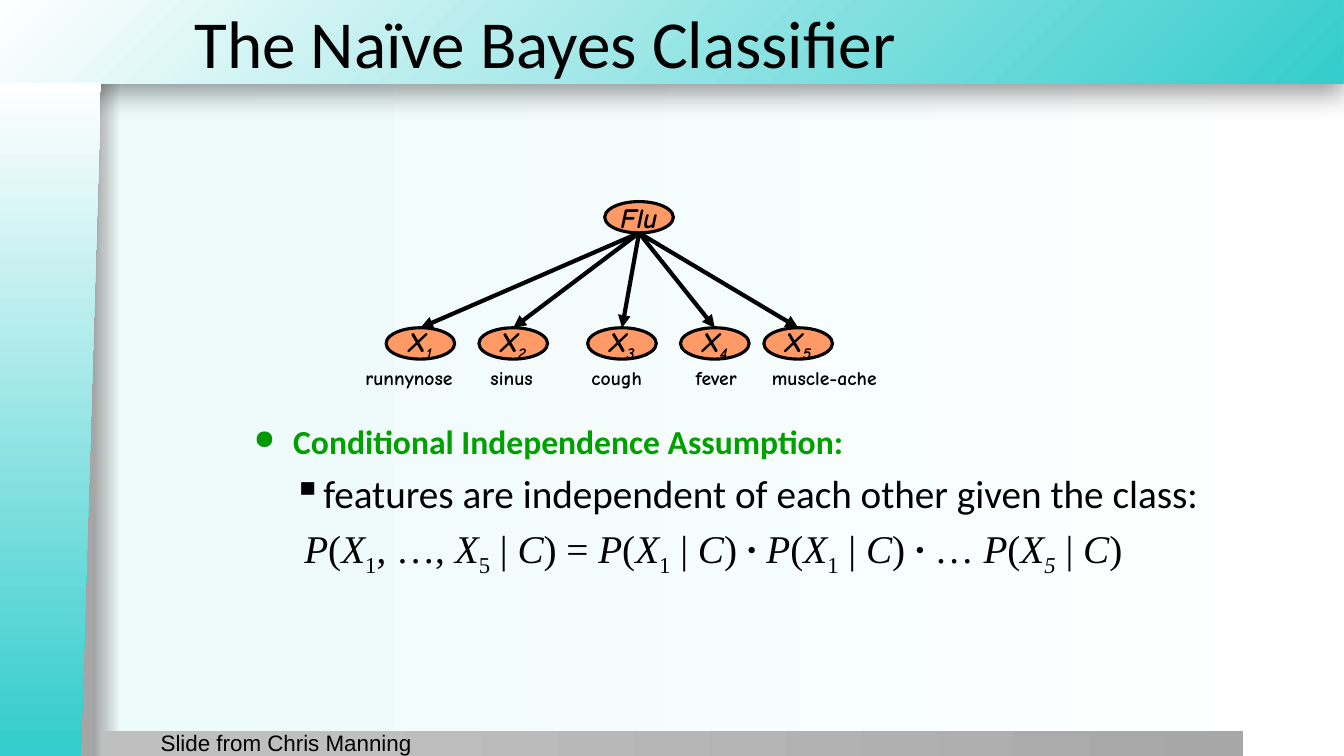
"""Build a slide on the naïve Bayes classifier with its feature diagram."""
from lxml import etree
from pptx import Presentation
from pptx.dml.color import RGBColor
from pptx.enum.shapes import MSO_CONNECTOR, MSO_SHAPE
from pptx.enum.text import MSO_ANCHOR, PP_ALIGN
from pptx.oxml.ns import qn
from pptx.util import Cm, Pt

STRAIGHT = MSO_CONNECTOR.STRAIGHT
RECTANGLE, OVAL = MSO_SHAPE.RECTANGLE, MSO_SHAPE.OVAL
MANUAL_INPUT = MSO_SHAPE.FLOWCHART_MANUAL_INPUT
MIDDLE, TOP = MSO_ANCHOR.MIDDLE, MSO_ANCHOR.TOP
LEFT, CENTER, RIGHT = PP_ALIGN.LEFT, PP_ALIGN.CENTER, PP_ALIGN.RIGHT

COLORS = {
    "teal": "34CCCC", "white": "FFFFFF", "black": "000000", "mist": "EDFBFB",
    "edge": "A6A6A6", "silver": "BFBFBF", "gray": "A7A7A7",
    "orange": "FF9966", "green": "00A000", "bullet": "009900",
}


def paint_gradient(owner, fill, stops, corner=False):
    """Fill with the given stops, left to right or out of the lower right corner."""
    fill.gradient()
    fill.gradient_angle = 0
    gradient = next(owner.iter(qn("a:gradFill")))
    stop_list = gradient.find(qn("a:gsLst"))
    for old_stop in list(stop_list):
        stop_list.remove(old_stop)
    for percent, color in stops:
        stop = etree.SubElement(stop_list, qn("a:gs"), pos=str(percent * 1000))
        etree.SubElement(stop, qn("a:srgbClr"), val=COLORS[color])
    if corner:
        gradient.remove(gradient.find(qn("a:lin")))
        path = etree.SubElement(gradient, qn("a:path"), {"path": "circle"})
        etree.SubElement(path, qn("a:fillToRect"), l="100000", t="100000")


def add_span(para, text, font, size, color="black", subscript=False, **formats):
    """Append a run of text with its font settings."""
    span = para.add_run()
    span.text = text
    for name, value in {"name": font, "size": Pt(size), **formats}.items():
        setattr(span.font, name, value)
    span.font.color.rgb = RGBColor.from_string(COLORS[color])
    if subscript:
        span._r.get_or_add_rPr().set("baseline", "-25000")


deck = Presentation()
deck.slide_width, deck.slide_height = Cm(33.87), Cm(19.05)
page = deck.slides.add_slide(deck.slide_layouts[6])
paint_gradient(page._element, page.background.fill,
               [(7, "edge"), (9, "mist"), (100, "white")])

bands = [
    (RECTANGLE, (-0.03, 0, 33.88, 2.11), [(0, "teal"), (100, "white")]),
    (RECTANGLE, (2.54, 18.42, 28.78, 0.66), [(20, "silver"), (100, "gray")]),
    (MANUAL_INPUT, (-7.21, 9.32, 16.97, 2.54), [(1, "teal"), (100, "white")]),
]
drawn_bands = []
for kind, place, stops in bands:
    band = page.shapes.add_shape(kind, *map(Cm, place))
    band.shadow.inherit = False
    band.line.fill.background()
    paint_gradient(band._element, band.fill, stops, corner=not drawn_bands)
    drawn_bands.append(band)
header, footer, sidebar = drawn_bands
sidebar.rotation = 270
sidebar._element.spPr.find(qn("a:xfrm")).set("flipV", "1")
effects = header._element.spPr.find(qn("a:effectLst"))
shadow = etree.SubElement(effects, qn("a:outerShdw"), blurRad=str(Pt(20)),
                          dist=str(Pt(6)), dir="5400000", rotWithShape="0")
shade = etree.SubElement(shadow, qn("a:srgbClr"), val=COLORS["black"])
etree.SubElement(shade, qn("a:alpha"), val="40000")

NODE_WIDTH, NODE_HEIGHT = 1.73, 0.79
FLU_LEFT, FLU_TOP, FEATURE_TOP = 15.24, 5.08, 8.26
nodes = [("Flu", "", FLU_LEFT, FLU_TOP)]
for number, left in enumerate([9.73, 12.07, 14.81, 17.15, 19.25], start=1):
    nodes.append(("X", str(number), left, FEATURE_TOP))
for name, index, left, top in nodes:
    node = page.shapes.add_shape(OVAL, Cm(left), Cm(top), Cm(NODE_WIDTH), Cm(NODE_HEIGHT))
    node.shadow.inherit = False
    node.fill.solid()
    node.fill.fore_color.rgb = RGBColor.from_string(COLORS["orange"])
    node.line.color.rgb = RGBColor.from_string(COLORS["black"])
    node.line.width = Pt(2.25)
    node.text_frame.word_wrap = False
    node.text_frame.vertical_anchor = MIDDLE
    para = node.text_frame.paragraphs[0]
    para.alignment = CENTER
    add_span(para, name, "Comic Neue", 20, bold=True, italic=True)
    if index:
        add_span(para, index, "Comic Neue", 20, subscript=True, bold=True, italic=True)
        arrow = page.shapes.add_connector(
            STRAIGHT, Cm(FLU_LEFT + NODE_WIDTH / 2), Cm(FLU_TOP + NODE_HEIGHT),
            Cm(left + NODE_WIDTH / 2), Cm(top))
        arrow.end_connect(node, 0)
        arrow.line.color.rgb = RGBColor.from_string(COLORS["black"])
        arrow.line.width = Pt(3)
        etree.SubElement(arrow.line._get_or_add_ln(), qn("a:tailEnd"), type="triangle")
        etree.SubElement(arrow._element.spPr, qn("a:effectLst"))

symptom = {"font": "Comic Neue", "size": 14, "bold": True}
texts = [
    ("runnynose", (8.89, 9.09, 2.84, 0.84), CENTER, MIDDLE, False, symptom),
    ("sinus", (12.07, 9.09, 1.65, 0.84), CENTER, MIDDLE, False, symptom),
    ("cough", (14.63, 9.09, 1.83, 0.84), CENTER, MIDDLE, False, symptom),
    ("fever", (17.15, 9.09, 1.8, 0.84), CENTER, MIDDLE, False, symptom),
    ("muscle-ache", (19.05, 9.09, 3.45, 0.84), CENTER, MIDDLE, False, symptom),
    ("The Naïve Bayes Classifier", (4.65, 0, 29.21, 2.11), LEFT, MIDDLE, True,
     {"font": "Calibri", "size": 48}),
    ("Slide from Chris Manning", (2.57, 18.26, 8.05, 0.84), RIGHT, TOP, True,
     {"font": "Arial", "size": 16}),
]
for text, place, alignment, anchor, wrap, formats in texts:
    box = page.shapes.add_textbox(*map(Cm, place))
    box.text_frame.word_wrap = wrap
    box.text_frame.vertical_anchor = anchor
    para = box.text_frame.paragraphs[0]
    para.alignment = alignment
    add_span(para, text, **formats)

STYLES = {"plain": {}, "italic": {"italic": True}, "bold": {"bold": True},
          "sub": {"subscript": True}, "italic sub": {"italic": True, "subscript": True}}
formula = [
    ("P", "italic"), ("(", "plain"), ("X", "italic"), ("1", "sub"), (", …, ", "plain"),
    ("X", "italic"), ("5", "sub"), (" | ", "plain"), ("C", "italic"), (") = ", "plain"),
]
for index, index_style, dot, ending in [("1", "sub", "∙ ", ""), ("1", "sub", "∙", " … "),
                                        ("5", "italic sub", "", "")]:
    formula += [("P", "italic"), ("(", "plain"), ("X", "italic"), (index, index_style),
                (" | ", "plain"), ("C", "italic"), (") " if dot else ")", "plain")]
    formula += [(mark, style) for mark, style in [(dot, "bold"), (ending, "plain")] if mark]

calibri = {"font": "Calibri", "size": 28}
lines = [
    (0, 0.99, -0.99, "●", [("Conditional Independence Assumption:", "bold")],
     {"font": "Calibri", "size": 24, "color": "green"}),
    (1, 1.75, -0.76, "▪",
     [("features are independent of each other given the class:", "plain")], calibri),
    (1, 1.27, 0, "", formula, {"font": "Times New Roman", "size": 28}),
]
body = page.shapes.add_textbox(Cm(6.15), Cm(10.49), Cm(24.59), Cm(6.02))
body.text_frame.word_wrap = True
for row, (level, margin, indent, bullet, spans, formats) in enumerate(lines):
    para = body.text_frame.add_paragraph() if row else body.text_frame.paragraphs[0]
    para.level = level
    para.space_before = Pt(formats["size"] * 0.2)
    properties = para._p.get_or_add_pPr()
    properties.set("marL", str(Cm(margin)))
    properties.set("indent", str(Cm(indent)))
    if level == 0:
        bullet_color = etree.SubElement(properties, qn("a:buClr"))
        etree.SubElement(bullet_color, qn("a:srgbClr"), val=COLORS["bullet"])
        etree.SubElement(properties, qn("a:buSzPct"), val="80000")
    if bullet:
        etree.SubElement(properties, qn("a:buChar"), char=bullet)
    for text, style in spans:
        add_span(para, text, **formats, **STYLES[style])

deck.save("out.pptx")
